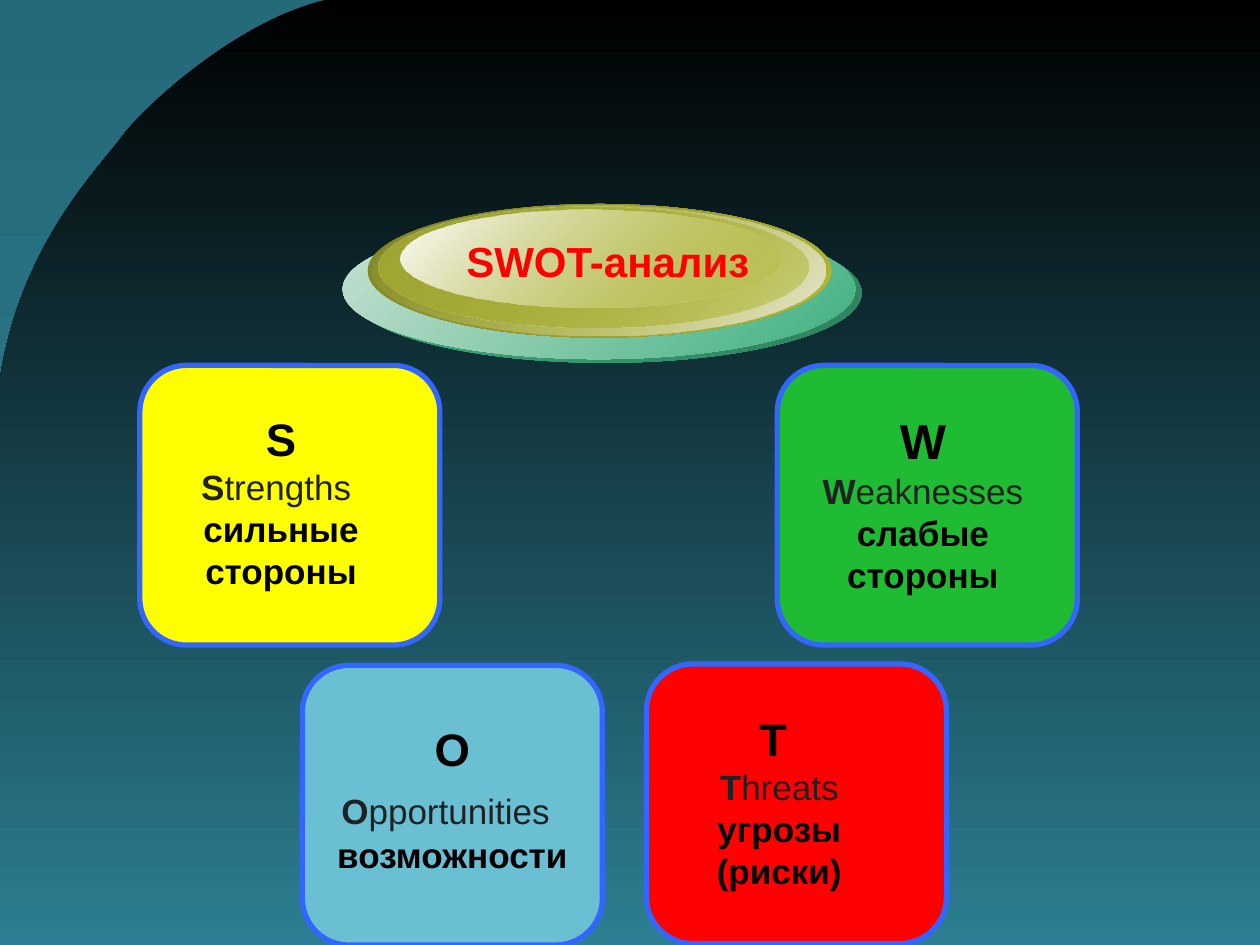
from pptx import Presentation
from pptx import util as u
from pptx.dml.color import RGBColor
from pptx.enum import shapes, text
from pptx.oxml import ns
from lxml import etree

Pt = u.Pt
KIND = shapes.MSO_SHAPE


def rgb(code):
    return RGBColor.from_string(code)


def blend(fill, stops, turn):
    """Fill with a two-stop gradient; a stop is a colour and its opacity in percent."""
    fill.gradient()
    fill.gradient_angle = 360 - turn
    for i, (stop, (code, clear)) in enumerate(zip(fill.gradient_stops, stops)):
        stop.color.rgb = rgb(code)
        stop.position = i
        if clear < 100:
            tint = stop._gs.find(ns.qn("a:srgbClr"))
            etree.SubElement(tint, ns.qn("a:alpha"), val=str(clear * 1000))


prs = Presentation()
prs.slide_width, prs.slide_height = Pt(720), Pt(540)
slide = prs.slides.add_slide(prs.slide_layouts[6])
blend(slide.background.fill, [("256A7A", 100), ("2C7F92", 100)], 90)

# Dark field with a curved corner, each Bézier arc drawn in short steps
arcs = [
    [(185.8, 0), (136.8, 11.5), (83.5, 59.8), (70.6, 77)],
    [(70.6, 77), (57.6, 95), (11.5, 139.7), (0, 216.7)],
]
steps = 30
curve = []
for a, b, c, d in arcs:
    for n in range(1, steps + 1):
        t = n / steps
        s = 1 - t
        curve.append([
            Pt(s**3 * a[k] + 3 * s * s * t * b[k] + 3 * s * t * t * c[k] + t**3 * d[k])
            for k in (0, 1)
        ])
edge = [(0, Pt(540)), (Pt(720), Pt(540)), (Pt(720), 0)]
pen = slide.shapes.build_freeform(Pt(185.8), 0)
pen.add_line_segments(curve + edge, close=True)
field = pen.convert_to_shape()
field.shadow.inherit = False
field.line.fill.background()
blend(field.fill, [("000000", 100), ("2C7F92", 100)], 90)

# Four cards
cards = [
    (79.9, 208.8, "FFFF00"),
    (444.2, 208.8, "1FBB32"),
    (369.4, 379.4, "FF0000"),
    (172.8, 380.2, "6BBFD3"),
]
for x, y, code in cards:
    card = slide.shapes.add_shape(KIND.ROUNDED_RECTANGLE, Pt(x), Pt(y), Pt(171.4), Pt(159.8))
    card.shadow.inherit = False
    card.fill.solid()
    card.fill.fore_color.rgb = rgb(code)
    card.line.color.rgb = rgb("3366FF")
    card.line.width = Pt(3)

# Layered oval badge, from back to front
ovals = [
    (199.4, 127.4, 293, 79.9, ("3FB180", 100), ("2E815E", 100)),
    (195.8, 125.3, 293, 79.9, ("C8E1D3", 100), ("3FB180", 100)),
    (210.2, 116.6, 265, 76.3, ("7F8428", 100), ("B2B838", 100)),
    (213.1, 117.4, 258.5, 74.2, ("B2B838", 0), ("E8E9D5", 100)),
    (216, 118.1, 246.2, 69.1, ("A1A633", 100), ("B2B838", 48)),
    (229, 119.5, 216.7, 56.2, ("FFFFFF", 100), ("B2B838", 38)),
]
for x, y, w, h, *stops in ovals:
    oval = slide.shapes.add_shape(KIND.OVAL, Pt(x), Pt(y), Pt(w), Pt(h))
    oval.shadow.inherit = False
    oval.line.fill.background()
    blend(oval.fill, stops, 45)

# Labels: left, top, width, height, wrap, paragraphs of (text, size, colour, bold)
ink, grey = "000000", "202122"
labels = [
    (258.5, 131, 177.8, 36, False, [[("SWOT-анализ", 24, "FF0000", True)]]),
    (74.9, 231.1, 171.4, 111.6, True, [
        [("S", 26, ink, True)],
        [("S", 20, grey, True), ("trengths ", 20, grey, False)],
        [("сильные стороны", 20, ink, True)],
    ]),
    (460.8, 231.1, 133.2, 113.8, True, [
        [("W ", 28, ink, True), ("W", 20, grey, True), ("eaknesses", 20, grey, False)],
        [("слабые стороны", 20, ink, True)],
    ]),
    (385.9, 402.5, 118.8, 111.6, True, [
        [("T ", 26, ink, True)],
        [("T", 20, grey, True), ("hreats", 20, grey, False)],
        [("угрозы (риски)", 20, ink, True)],
    ]),
    (182.2, 408.2, 152.6, 97.2, True, [
        [("O", 26, ink, True)],
        [("O", 20, grey, True), ("pportunities", 20, grey, False),
         (" ", 28, grey, False), (" ", 26, ink, True), ("возможности", 20, ink, True)],
    ]),
]
for x, y, w, h, wrap, paras in labels:
    frame = slide.shapes.add_textbox(Pt(x), Pt(y), Pt(w), Pt(h)).text_frame
    frame.word_wrap = wrap
    frame.auto_size = text.MSO_AUTO_SIZE.SHAPE_TO_FIT_TEXT
    for i, runs in enumerate(paras):
        para = frame.add_paragraph() if i else frame.paragraphs[0]
        para.alignment = text.PP_ALIGN.CENTER
        for words, size, code, bold in runs:
            run = para.add_run()
            run.text = words
            look = {"name": "Arial", "size": Pt(size), "bold": bold}
            for key, value in look.items():
                setattr(run.font, key, value)
            run.font.color.rgb = rgb(code)

prs.save("out.pptx")
